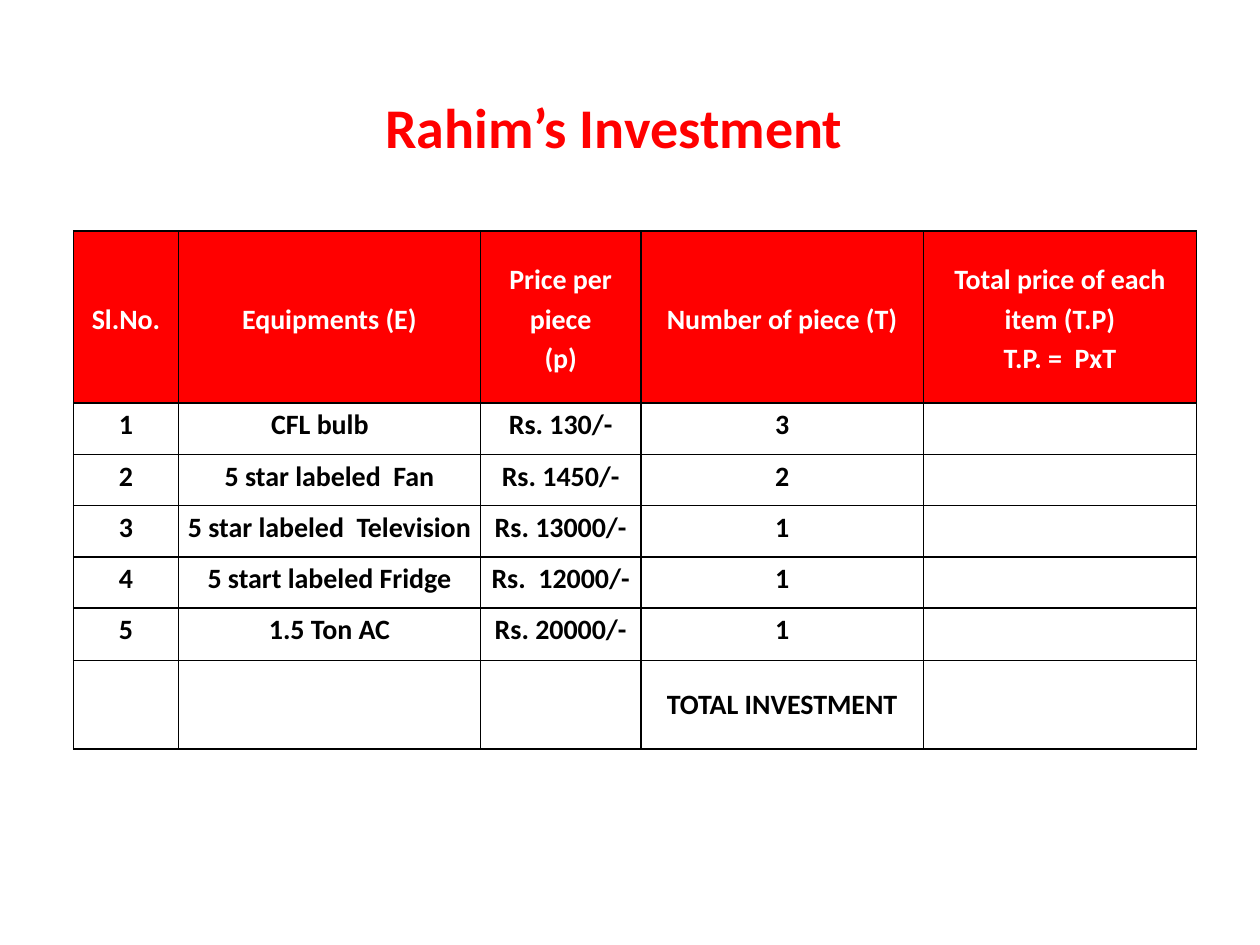
from lxml.etree import SubElement
from pptx import Presentation
from pptx.dml.color import RGBColor
from pptx.enum.text import MSO_ANCHOR as Anchor, PP_ALIGN as Align
from pptx.oxml.ns import qn
from pptx.util import Pt

RED, WHITE, BLACK = "FF0000", "FFFFFF", "000000"
FONT = "Calibri"
COL_WIDTHS = [60, 172.6, 91.7, 161.4, 156.2]
ROW_HEIGHTS = [98.4] + [29.3] * 4 + [30, 50.5]
ROWS = [
    ["Sl.No.", "Equipments (E)", "Price per\npiece\n(p)", "Number of piece (T)",
     "Total price of each item (T.P)\nT.P. =  PxT"],
    ["1", "CFL bulb", "Rs. 130/-", "3", ""],
    ["2", "5 star labeled  Fan", "Rs. 1450/-", "2", ""],
    ["3", "5 star labeled  Television", "Rs. 13000/-", "1", ""],
    ["4", "5 start labeled Fridge", "Rs.  12000/-", "1", ""],
    ["5", "1.5 Ton AC", "Rs. 20000/-", "1", ""],
    ["", "", "", "TOTAL INVESTMENT", ""],
]


def rgb(value):
    return RGBColor.from_string(value)


def format_text(tf, size, color, spacing=1.0):
    for p in tf.paragraphs:
        p.alignment = Align.CENTER
        p.line_spacing = spacing
        font = p.font
        font.name, font.size, font.bold = FONT, Pt(size), True
        font.color.rgb = rgb(color)


def add_title(slide, left, top, width, height):
    title = slide.shapes.title
    title.left, title.top = Pt(left), Pt(top)
    title.width, title.height = Pt(width), Pt(height)
    tf = title.text_frame
    tf.text = "Rahim’s Investment"
    tf.vertical_anchor = Anchor.MIDDLE
    tf.margin_left = Pt(13)
    format_text(tf, 32, RED)


def set_borders(cell, color, width):
    props = cell._tc.get_or_add_tcPr()
    for i, side in enumerate(("lnL", "lnR", "lnT", "lnB")):
        line = SubElement(props, qn(f"a:{side}"), w=str(Pt(width)))
        fill = SubElement(line, qn("a:solidFill"))
        SubElement(fill, qn("a:srgbClr"), val=color)
        props.insert(i, line)  # borders must precede the cell fill


def add_investment_table(slide, left, top):
    table = slide.shapes.add_table(
        len(ROWS), len(COL_WIDTHS), Pt(left), Pt(top),
        Pt(sum(COL_WIDTHS)), Pt(sum(ROW_HEIGHTS))).table
    for column, width in zip(table.columns, COL_WIDTHS):
        column.width = Pt(width)
    last = len(ROWS) - 1
    for r, (values, height) in enumerate(zip(ROWS, ROW_HEIGHTS)):
        table.rows[r].height = Pt(height)
        for c, value in enumerate(values):
            cell = table.cell(r, c)
            cell.text = value
            cell.margin_left = cell.margin_right = Pt(5)
            cell.margin_top = cell.margin_bottom = 0
            cell.vertical_anchor = Anchor.MIDDLE if r in (0, last) else Anchor.TOP
            cell.fill.solid()
            cell.fill.fore_color.rgb = rgb(RED if r == 0 else WHITE)
            format_text(cell.text_frame, 16, WHITE if r == 0 else BLACK,
                        1.0 if r == last else 1.15)
            set_borders(cell, BLACK, 1)
    table.cell(1, 1).margin_right = Pt(16)  # the first item sits left of centre


def main():
    prs = Presentation()
    prs.slide_width, prs.slide_height = Pt(720), Pt(540)
    slide = prs.slides.add_slide(prs.slide_layouts[5])
    add_title(slide, -24, 24, 744, 96)
    add_investment_table(slide, 42, 132)
    prs.save("out.pptx")


if __name__ == "__main__":
    main()
